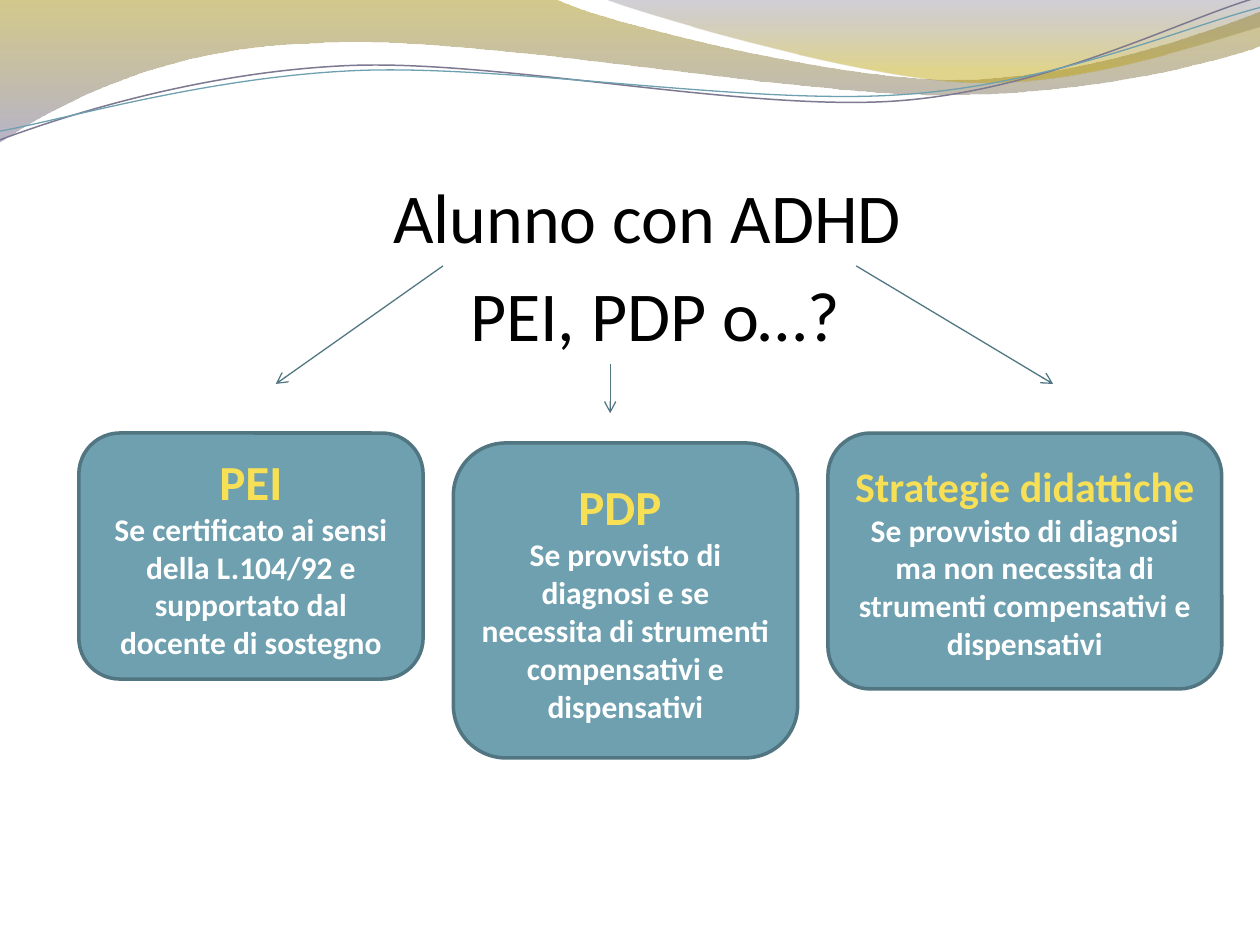
from collections import namedtuple
from dataclasses import dataclass
from math import cos, radians, sin

from lxml.etree import SubElement
from pptx import Presentation
from pptx.dml.color import RGBColor
from pptx.enum.shapes import MSO_CONNECTOR as Connector, MSO_SHAPE as Shape
from pptx.enum.text import MSO_ANCHOR as Anchor, MSO_AUTO_SIZE as AutoSize, PP_ALIGN as Align
from pptx.oxml.ns import qn
from pptx.util import Cm, Pt

Box = namedtuple("Box", "left top width height")  # centimetres


@dataclass(frozen=True)
class Theme:
    font: str = "Calibri"
    title: str = "000000"
    heading: str = "F7DF56"
    body: str = "FFFFFF"
    card: str = "6EA0B0"
    card_line: str = "517682"
    arrow: str = "517783"
    violet_line: str = "7C7991"
    blue_line: str = "6EA0B0"
    title_size: int = 40
    heading_size: int = 28
    long_heading_size: int = 24
    body_size: int = 18
    # Gradient stops: position, colour, opacity in percent
    olive_wave: tuple = ((0, "9E8700", 45), (1, "7B769C", 55))
    grey_wave: tuple = ((0, "66627C", 30), (0.8, "BDA100", 45))


THEME = Theme()
PAGE = Box(0, 0, 25.4, 19.05)
CARD_GAP = 0.61
CURVE_TILT = -2.7  # degrees
CURVE_CENTER = 4.99, 0.58

# Wave outlines on a grid ten units wide: one point makes a straight line,
# three points make a cubic curve
OLIVE_WAVE = [
    [(0, 0)], [(4.4, -0.01)], [(4.76, 0.17), (6.64, 0.63), (7.58, 0.63)],
    [(8.53, 0.63), (9.58, 0.26), (10, 0.09)], [(10.01, 0.36)],
    [(9.83, 0.44), (8.7, 0.76), (7.46, 0.75)], [(6.22, 0.75), (3.82, 0.28), (2.57, 0.34)],
    [(1.29, 0.36), (0.46, 0.83), (-0.01, 1.13)], [(0, 0)]]
GREY_WAVE = [
    [(4.79, -0.01)], [(5.09, 0.11), (6.82, 0.62), (7.69, 0.65)],
    [(8.56, 0.69), (9.61, 0.32), (10, 0.21)], [(10, 0)], [(4.79, -0.01)]]
VIOLET_CURVE = [
    [(0, 1.11)], [(0.48, 0.93), (1.58, 0.57), (2.77, 0.52)],
    [(3.95, 0.47), (5.93, 0.89), (7.13, 0.8)], [(8.33, 0.71), (9.38, 0.15), (9.98, -0.02)]]
BLUE_CURVE = [
    [(0, 1.04)], [(0.47, 0.96), (1.64, 0.61), (2.83, 0.56)],
    [(4.03, 0.51), (5.97, 0.84), (7.17, 0.75)], [(8.36, 0.67), (9.41, 0.21), (10, 0.06)]]


def place(shape, box):
    for name, value in box._asdict().items():
        setattr(shape, name, Cm(value))


def set_line(shape, color, width):
    shape.line.color.rgb = RGBColor.from_string(color)
    shape.line.width = Pt(width)


def write_para(para, text, size, color, bold=False):
    para.alignment = Align.CENTER
    span = para.add_run()
    span.text = text
    style = {"name": THEME.font, "size": Pt(size), "bold": bold}
    for name, value in style.items():
        setattr(span.font, name, value)
    span.font.color.rgb = RGBColor.from_string(color)


def turn(point, degrees):
    """Turn a grid point clockwise about the centre of the thin curves."""
    angle = radians(degrees)
    dx, dy = (value - middle for value, middle in zip(point, CURVE_CENTER))
    return (CURVE_CENTER[0] + dx * cos(angle) - dy * sin(angle),
            CURVE_CENTER[1] + dx * sin(angle) + dy * cos(angle))


def add_outline(page, box, segments, closed, tilt=0):
    unit = box.width / 10
    points = [turn(point, -tilt) for segment in segments for point in segment]
    points = [(Cm(box.left + x * unit), Cm(box.top + y * unit)) for x, y in points]
    builder = page.shapes.build_freeform(*points[0])
    builder.add_line_segments(points[1:], close=closed)
    shape = builder.convert_to_shape()
    shape.rotation = tilt
    shape.shadow.inherit = False
    # Join each group of three points into one cubic curve
    nodes = iter(shape.element.xpath(".//a:path/a:lnTo"))
    for segment in segments[1:]:
        group = [next(nodes) for _ in segment]
        if len(group) == 3:
            group[0].tag = qn("a:cubicBezTo")
            for node in group[1:]:
                group[0].append(node[0])
                node.getparent().remove(node)
    return shape


def add_waves(page, box):
    # Translucent gradient bands
    for outline, stops in ((OLIVE_WAVE, THEME.olive_wave), (GREY_WAVE, THEME.grey_wave)):
        band = add_outline(page, box, outline, closed=True)
        band.line.fill.background()
        band.fill.gradient()
        band.fill.gradient_angle = 270
        for stop, (position, color, _) in zip(band.fill.gradient_stops, stops):
            stop.position = position
            stop.color.rgb = RGBColor.from_string(color)
        for node, (_, _, opacity) in zip(band.element.xpath(".//a:gs/a:srgbClr"), stops):
            SubElement(node, qn("a:alpha"), val=str(opacity * 1000))
    # Thin curves
    for outline, color, width in ((VIOLET_CURVE, THEME.violet_line, 0.85),
                                  (BLUE_CURVE, THEME.blue_line, 0.75)):
        curve = add_outline(page, box, outline, closed=False, tilt=CURVE_TILT)
        curve.fill.background()
        set_line(curve, color, width)


def add_title(page, box, lines):
    title = page.shapes.title
    place(title, box)
    frame = title.text_frame
    settings = {"word_wrap": True, "auto_size": AutoSize.NONE, "vertical_anchor": Anchor.TOP}
    for name, value in settings.items():
        setattr(frame, name, value)
    for index, line in enumerate(lines):
        para = frame.add_paragraph() if index else frame.paragraphs[0]
        para.space_before = Pt(THEME.title_size * 0.2)
        write_para(para, line, THEME.title_size, THEME.title)


def add_arrows(page, box, arrows):
    for x1, y1, x2, y2 in arrows:
        arrow = page.shapes.add_connector(
            Connector.STRAIGHT, Cm(box.left + x1), Cm(box.top + y1),
            Cm(box.left + x2), Cm(box.top + y2))
        set_line(arrow, THEME.arrow, 0.75)
        SubElement(arrow.line._get_or_add_ln(), qn("a:tailEnd"), type="arrow")
        SubElement(arrow.element.spPr, qn("a:effectLst"))


def add_card(page, box, heading, heading_size, body):
    card = page.shapes.add_shape(Shape.ROUNDED_RECTANGLE, 0, 0, 0, 0)
    place(card, box)
    card.shadow.inherit = False
    card.fill.solid()
    card.fill.fore_color.rgb = RGBColor.from_string(THEME.card)
    set_line(card, THEME.card_line, 2)
    frame = card.text_frame
    frame.word_wrap = True
    frame.vertical_anchor = Anchor.MIDDLE
    write_para(frame.paragraphs[0], heading, heading_size, THEME.heading, bold=True)
    write_para(frame.add_paragraph(), body, THEME.body_size, THEME.body, bold=True)


def add_cards(page, box, cards):
    left = box.left
    for drop, width, height, *texts in cards:
        add_card(page, Box(left, box.top + drop, width, height), *texts)
        left += width + CARD_GAP


def main():
    deck = Presentation()
    deck.slide_width, deck.slide_height = Cm(PAGE.width), Cm(PAGE.height)
    page = deck.slides.add_slide(deck.slide_layouts[5])

    add_waves(page, Box(0, 0, PAGE.width, 2.87))
    add_title(page, Box(1.27, 3.38, 23.55, 14.2), ["Alunno con ADHD", " PEI, PDP o…?"])
    add_arrows(page, PAGE, [(8.93, 5.36, 5.56, 7.74),
                            (12.3, 7.34, 12.3, 8.33),
                            (17.26, 5.36, 21.23, 7.74)])
    # Each card: drop below the row's top, width, height, heading, size, body
    add_cards(page, Box(1.59, 8.73, 23.03, 6.55), [
        (0, 6.94, 4.96, "PEI", THEME.heading_size,
         "Se certificato ai sensi della L.104/92 e supportato dal docente di sostegno"),
        (0.2, 6.94, 6.35, "PDP ", THEME.heading_size,
         "Se provvisto di diagnosi e se necessita di strumenti compensativi e dispensativi"),
        (0, 7.94, 5.16, "Strategie didattiche", THEME.long_heading_size,
         "Se provvisto di diagnosi ma non necessita di strumenti compensativi e dispensativi"),
    ])
    deck.save("out.pptx")


if __name__ == "__main__":
    main()
